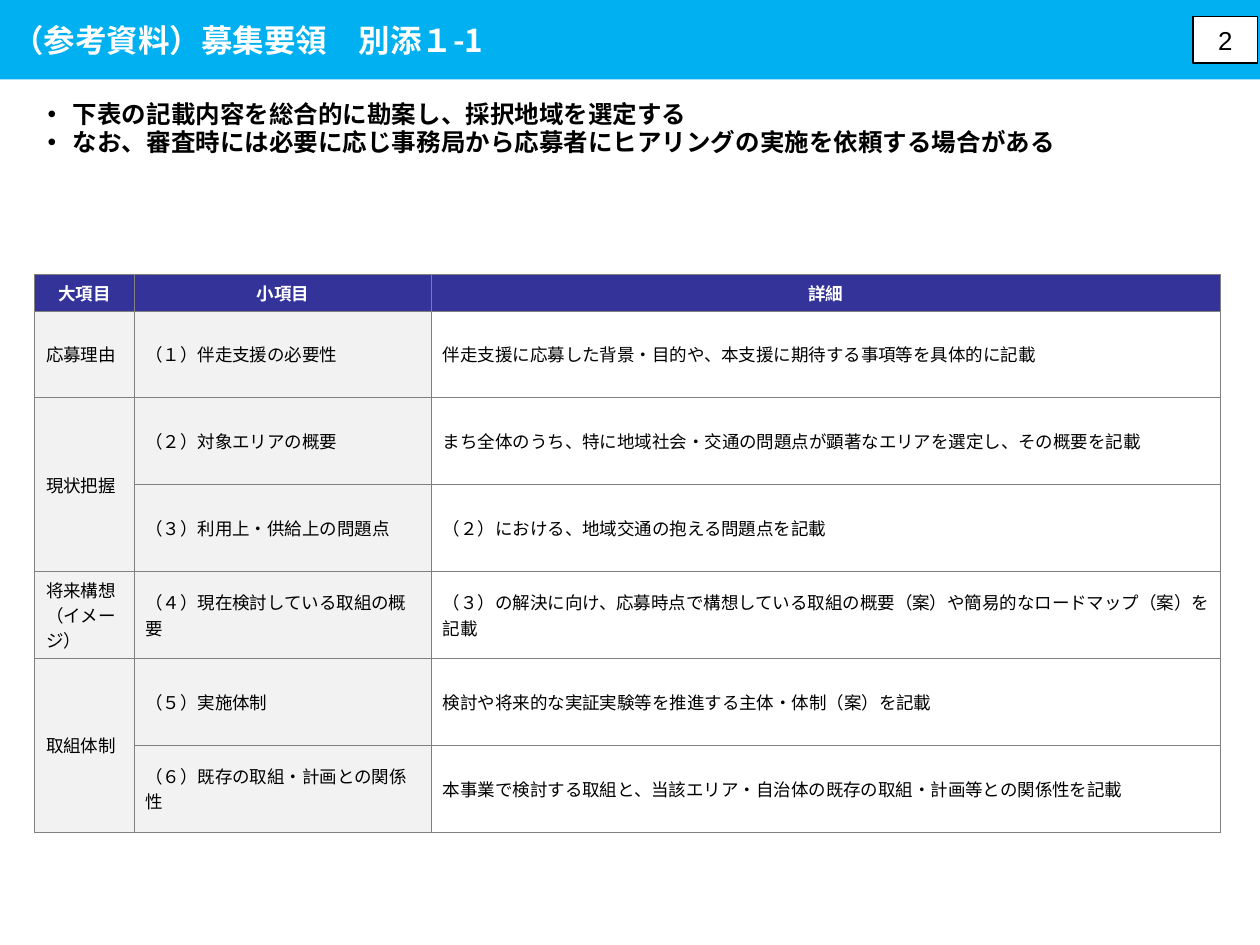
from dataclasses import dataclass
from lxml.etree import SubElement
from pptx import Presentation
from pptx.dml.color import RGBColor as RGB
from pptx.enum.shapes import MSO_SHAPE as SHAPE
from pptx.enum.text import MSO_ANCHOR as ANCHOR, PP_ALIGN as ALIGN
from pptx.oxml import parse_xml
from pptx.oxml.ns import nsdecls, qn
from pptx.util import Cm, Pt

TITLE = "（参考資料）募集要領　別添１-1"
PAGE = "2"
POINTS = [
    "下表の記載内容を総合的に勘案し、採択地域を選定する",
    "なお、審査時には必要に応じ事務局から応募者にヒアリングの実施を依頼する場合がある",
]
HEADER = ("大項目", "小項目", "詳細")
GROUPS = [
    ("応募理由", [
        ("（１）伴走支援の必要性", "伴走支援に応募した背景・目的や、本支援に期待する事項等を具体的に記載"),
    ]),
    ("現状把握", [
        ("（２）対象エリアの概要", "まち全体のうち、特に地域社会・交通の問題点が顕著なエリアを選定し、その概要を記載"),
        ("（３）利用上・供給上の問題点", "（２）における、地域交通の抱える問題点を記載"),
    ]),
    ("将来構想\v（イメージ）", [
        ("（４）現在検討している取組の概要",
         "（３）の解決に向け、応募時点で構想している取組の概要（案）や簡易的なロードマップ（案）を記載"),
    ]),
    ("取組体制", [
        ("（５）実施体制", "検討や将来的な実証実験等を推進する主体・体制（案）を記載"),
        ("（６）既存の取組・計画との関係性",
         "本事業で検討する取組と、当該エリア・自治体の既存の取組・計画等との関係性を記載"),
    ]),
]
COLS = (2, 6, 15.9)
HEAD_H, ROW_H = 0.73, 1.75


@dataclass(frozen=True)
class Theme:
    """Colours, fonts and type sizes of the slide."""
    band: str = "00B0F0"
    head: str = "333399"
    label: str = "F2F2F2"
    white: str = "FFFFFF"
    black: str = "000000"
    border: str = "808080"
    latin: str = "Arial"
    cjk: str = "Noto Sans CJK JP"
    title_pt: float = 18
    page_pt: float = 14.8
    body_pt: float = 14
    table_pt: float = 10


T = Theme()


def format_text(tf, size, color, font, bold=False, align=ALIGN.LEFT):
    """Apply one text style to every run of a text frame."""
    tf.word_wrap = True
    for p in tf.paragraphs:
        p.alignment = align
        for r in p.runs:
            r.font.size, r.font.bold, r.font.name = Pt(size), bold, font
            r.font.color.rgb = RGB.from_string(color)
            SubElement(r.font._element, qn("a:ea"), typeface=T.cjk)


def add_box(s, box, text, fill, line=None):
    """Add a filled rectangle with vertically centred text."""
    sp = s.shapes.add_shape(SHAPE.RECTANGLE, *map(Cm, box))
    sp.shadow.inherit = False
    sp.fill.solid()
    sp.fill.fore_color.rgb = RGB.from_string(fill)
    if line:
        sp.line.color.rgb, sp.line.width = RGB.from_string(line), Pt(0.75)
    else:
        sp.line.fill.background()
    tf = sp.text_frame
    tf.text, tf.vertical_anchor = text, ANCHOR.MIDDLE
    return tf


def add_points(s):
    """Add the bulleted lead text."""
    tf = s.shapes.add_textbox(Cm(0.71), Cm(1.93), Cm(24), Cm(1.6)).text_frame
    tf.margin_top = Cm(0.1)
    tf.text = "\n".join(POINTS)
    for p in tf.paragraphs:
        p.line_spacing = 0.96
        pPr = p._p.get_or_add_pPr()
        pPr.set("marL", str(Cm(0.51)))
        pPr.set("indent", str(-Cm(0.51)))
        SubElement(pPr, qn("a:buFont"), typeface=T.latin)
        SubElement(pPr, qn("a:buChar"), char="•")
    format_text(tf, T.body_pt, T.black, T.latin, True)


def style_cell(cell, fill, is_head):
    """Set the fill, borders, margins and text style of a cell."""
    cell.fill.solid()
    cell.fill.fore_color.rgb = RGB.from_string(fill)
    cell.vertical_anchor = ANCHOR.MIDDLE
    cell.margin_left = cell.margin_right = Cm(0.23)
    cell.margin_top = cell.margin_bottom = Cm(0.1)
    tcPr = cell._tc.get_or_add_tcPr()
    for i, side in enumerate("LRTB"):
        tcPr.insert(i, parse_xml(
            f'<a:ln{side} {nsdecls("a")} w="{Pt(0.5)}"><a:solidFill>'
            f'<a:srgbClr val="{T.border}"/></a:solidFill></a:ln{side}>'))
    format_text(cell.text_frame, T.table_pt, T.white if is_head else T.black,
                T.cjk, is_head, ALIGN.CENTER if is_head else ALIGN.LEFT)


def add_criteria(s):
    """Add the criteria table, merging the first column by group."""
    rows, spans = [HEADER], []
    for name, items in GROUPS:
        spans.append((len(rows), len(rows) + len(items) - 1))
        rows += [("" if i else name, *item) for i, item in enumerate(items)]
    heights = [HEAD_H] + [ROW_H] * (len(rows) - 1)
    table = s.shapes.add_table(len(rows), len(COLS), Cm(0.7), Cm(5.54),
                               Cm(sum(COLS)), Cm(sum(heights))).table
    for col, width in zip(table.columns, COLS):
        col.width = Cm(width)
    for y, (values, height) in enumerate(zip(rows, heights)):
        table.rows[y].height = Cm(height)
        fills = (T.label, T.label, T.white) if y else [T.head] * len(COLS)
        for x, (value, fill) in enumerate(zip(values, fills)):
            cell = table.cell(y, x)
            cell.text_frame.text = value
            style_cell(cell, fill, y == 0)
    for first, last in spans:
        if last > first:
            table.cell(first, 0).merge(table.cell(last, 0))


def main():
    """Build and save the slide."""
    prs = Presentation()
    prs.slide_width, prs.slide_height = Cm(25.4), Cm(19.05)
    s = prs.slides.add_slide(prs.slide_layouts[6])
    add_points(s)
    add_criteria(s)
    tf = add_box(s, (0, 0, 25.4, 1.6), TITLE, T.band)
    format_text(tf, T.title_pt, T.white, T.cjk, True)
    tf = add_box(s, (24.05, 0.33, 1.3, 0.94), PAGE, T.white, T.black)
    format_text(tf, T.page_pt, T.black, T.latin, align=ALIGN.CENTER)
    prs.save("out.pptx")


if __name__ == "__main__":
    main()
